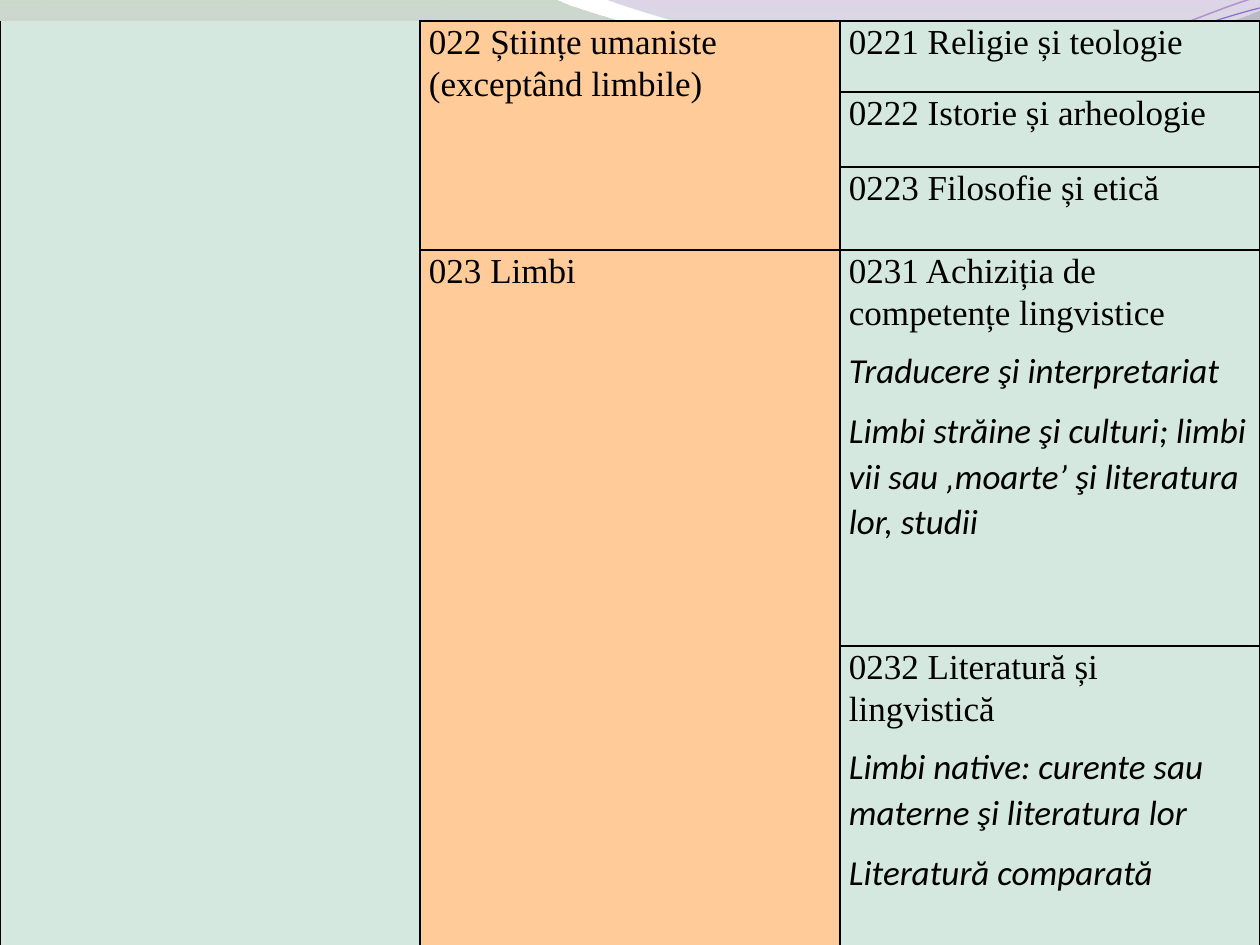
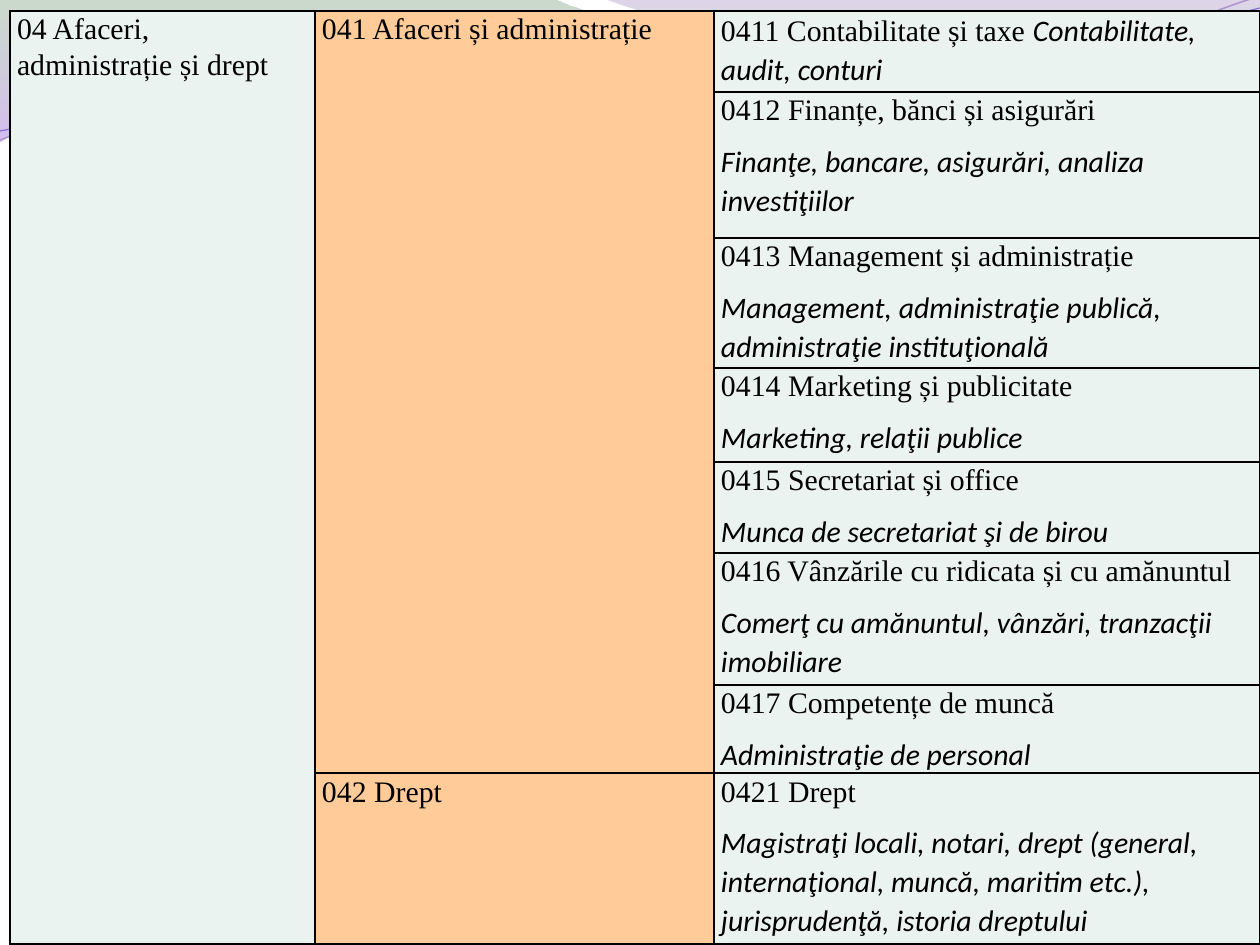
from dataclasses import dataclass

from lxml import etree
from pptx import Presentation
from pptx.dml.color import RGBColor as Rgb
from pptx.oxml.ns import qn
from pptx.util import Pt

EMU_PER_PX = 914400 / 126
SLIDE_BOX = (0, 0, 1260, 945)


@dataclass(frozen=True)
class Theme:
    heading_font: str = "Times New Roman"
    detail_font: str = "Calibri"
    ink: str = "000000"
    narrow_fill: str = "FFCC99"
    mint: str = "D5E8DF"
    pale_mint: str = "EAF3EF"
    large: int = 20
    medium: int = 17
    border: int = 1
    line_spacing: float = 1.07
    space_after: int = 8


THEME = Theme()


@dataclass(frozen=True)
class Field:
    heading: str
    details: tuple = ()
    inline: str = ""


@dataclass(frozen=True)
class Classification:
    box: tuple
    columns: tuple
    rows: tuple
    size: int
    inset: int
    tint: str
    broad: tuple   # (text, number of rows, bordered sides)
    narrow: tuple  # (text, detailed fields)


HUMANITIES = Classification(
    box=(0, 21, 1260, 924),
    columns=(420, 420, 420),
    rows=(71, 75, 83, 396, 315),
    size=THEME.large, inset=9, tint=THEME.mint,
    broad=(("", 3, "LR"), ("", 2, "LRB")),
    narrow=(
        ("022 Științe umaniste (exceptând limbile)", (
            Field("0221 Religie și teologie"),
            Field("0222 Istorie și arheologie"),
            Field("0223 Filosofie și etică"))),
        ("023 Limbi", (
            Field("0231 Achiziția de competențe lingvistice", (
                "Traducere şi interpretariat",
                "Limbi străine şi culturi; limbi vii sau ‚moarte’ şi literatura lor, studii")),
            Field("0232 Literatură și lingvistică", (
                "Limbi native: curente sau materne şi literatura lor",
                "Literatură comparată")))),
    ))

BUSINESS = Classification(
    box=(10, 11, 1250, 933),
    columns=(305, 399, 546),
    rows=(81, 146, 130, 94, 91, 132, 88, 171),
    size=THEME.medium, inset=7, tint=THEME.pale_mint,
    broad=(("04 Afaceri, administrație și drept", 7, "LRT"), ("", 1, "LRB")),
    narrow=(
        ("041 Afaceri și administrație", (
            Field("0411 Contabilitate și taxe ", inline="Contabilitate, audit, conturi"),
            Field("0412 Finanțe, bănci și asigurări",
                  ("Finanţe, bancare, asigurări, analiza investiţiilor",)),
            Field("0413 Management și administrație",
                  ("Management, administraţie publică, administraţie instituţională",)),
            Field("0414 Marketing și publicitate", ("Marketing, relaţii publice",)),
            Field("0415 Secretariat și office", ("Munca de secretariat şi de birou",)),
            Field("0416 Vânzările cu ridicata și cu amănuntul",
                  ("Comerţ cu amănuntul, vânzări, tranzacţii imobiliare",)),
            Field("0417 Competențe de muncă", ("Administraţie de personal",)))),
        ("042 Drept", (
            Field("0421 Drept", (
                "Magistraţi locali, notari, drept (general, internaţional, muncă, "
                "maritim etc.), jurisprudenţă, istoria dreptului",)),)),
    ))

# Outlines: one pair is a straight step, three pairs are one Bézier step.
# Gradient stops: position, colour, opacity in percent.
BANDS = (
    (((0, 0),), ((554, -1),),
     ((600, 21), (837, 79), (955, 79)), ((1075, 79), (1207, 33), (1260, 11)),
     ((1261, 45),),
     ((1239, 55), (1096, 96), (940, 95)), ((784, 95), (481, 35), (324, 43)),
     ((163, 45), (58, 105), (-1, 142))),
    (((604, -1),),
     ((641, 14), (859, 78), (969, 82)), ((1079, 87), (1211, 40), (1260, 26)),
     ((1260, 0),)),
)
BAND_STOPS = (
    ((0, "8DAE8E", 45), (1, "B286E3", 55)),
    ((0, "9173B3", 30), (0.8, "A4D3A7", 45)),
)
STRANDS = (
    ("AE92CD", 0.85,
     (((0, 140),), ((60, 117), (199, 72), (349, 66)),
      ((498, 59), (747, 112), (898, 101)), ((1050, 89), (1182, 19), (1257, -3)))),
    ("8C73D0", 0.75,
     (((0, 131),), ((59, 121), (207, 77), (357, 71)),
      ((508, 64), (752, 106), (903, 95)), ((1053, 84), (1186, 26), (1260, 8)))),
)


def px(length):
    return round(length * EMU_PER_PX)


def draw_outline(slide, box, steps, close):
    """Draw through all points, then turn each run of three into a curve."""
    points = [(px(box[0] + x), px(box[1] + y)) for step in steps for x, y in step]
    builder = slide.shapes.build_freeform(*points[0])
    builder.add_line_segments(points[1:], close=close)
    outline = builder.convert_to_shape()
    outline.shadow.inherit = False
    segments = iter(list(outline.element.iter(qn("a:lnTo"))))
    for step in steps[1:]:
        first, *others = [next(segments) for _ in step]
        if others:
            first.tag = qn("a:cubicBezTo")
            for segment in others:
                first.append(segment[0])
                segment.getparent().remove(segment)
    return outline


def draw_waves(slide, box):
    waves = []
    for steps, stops in zip(BANDS, BAND_STOPS):
        band = draw_outline(slide, box, steps, close=True)
        band.line.fill.background()
        band.fill.gradient()
        band.fill.gradient_angle = 270
        for stop, (position, color, _) in zip(band.fill.gradient_stops, stops):
            stop.position = position
            stop.color.rgb = Rgb.from_string(color)
        tints = band.element.spPr.iter(qn("a:srgbClr"))
        for tint, (_, _, opacity) in zip(tints, stops):
            etree.SubElement(tint, qn("a:alpha"), val=str(opacity * 1000))
        waves.append(band)
    for color, width, steps in STRANDS:
        strand = draw_outline(slide, box, steps, close=False)
        strand.fill.background()
        strand.line.color.rgb = Rgb.from_string(color)
        strand.line.width = Pt(width)
        waves.append(strand)
    return waves


def set_borders(cell, sides):
    """Rule the given sides (letters of LRTB) and clear the others."""
    properties = cell._tc.get_or_add_tcPr()
    for index, side in enumerate("LRTB"):
        rule = etree.Element(qn(f"a:ln{side}"), w=str(Pt(THEME.border)))
        if side in sides:
            fill = etree.SubElement(rule, qn("a:solidFill"))
            etree.SubElement(fill, qn("a:srgbClr"), val=THEME.ink)
        else:
            etree.SubElement(rule, qn("a:noFill"))
        properties.insert(index, rule)


def style_font(font, size, detail=False):
    font.name = THEME.detail_font if detail else THEME.heading_font
    font.italic = detail
    font.size = Pt(size)
    font.color.rgb = Rgb.from_string(THEME.ink)


def write_field(cell, field, size):
    frame = cell.text_frame
    for index, text in enumerate((field.heading, *field.details)):
        paragraph = frame.add_paragraph() if index else frame.paragraphs[0]
        paragraph.line_spacing = THEME.line_spacing
        paragraph.space_after = Pt(THEME.space_after)
        style_font(paragraph.font, size, detail=index > 0)
        if text:
            paragraph.add_run().text = text
    if field.inline:
        examples = frame.paragraphs[0].add_run()
        examples.text = field.inline
        style_font(examples.font, size, detail=True)


def fill_block(grid, plan, column, first, count, field, color, sides="LRTB"):
    """Merge rows of one column into a block and fill it."""
    for row in range(first, first + count):
        cell = grid.cell(row, column)
        ends = ("T" if row == first else "") + ("B" if row == first + count - 1 else "")
        set_borders(cell, [side for side in sides if side in "LR" + ends])
        cell.fill.solid()
        cell.fill.fore_color.rgb = Rgb.from_string(color)
        cell.margin_left = cell.margin_right = px(plan.inset)
        cell.margin_top = cell.margin_bottom = 0
    head = grid.cell(first, column)
    if count > 1:
        head.merge(grid.cell(first + count - 1, column))
    if field.heading:
        write_field(head, field, plan.size)


def draw_classification(slide, plan):
    grid = slide.shapes.add_table(len(plan.rows), len(plan.columns),
                                  *map(px, plan.box)).table
    grid.first_row = grid.horz_banding = False
    for column, width in zip(grid.columns, plan.columns):
        column.width = px(width)
    for row, height in zip(grid.rows, plan.rows):
        row.height = px(height)

    top = 0
    for text, count, sides in plan.broad:
        fill_block(grid, plan, 0, top, count, Field(text), plan.tint, sides)
        top += count
    top = 0
    for text, fields in plan.narrow:
        fill_block(grid, plan, 1, top, len(fields), Field(text), THEME.narrow_fill)
        for row, field in enumerate(fields, top):
            fill_block(grid, plan, 2, row, 1, field, plan.tint)
        top += len(fields)


def main():
    deck = Presentation()
    deck.slide_width, deck.slide_height = map(px, SLIDE_BOX[2:])
    blank = deck.slide_layouts[6]
    slides = [deck.slides.add_slide(blank) for _ in range(2)]
    # The waves are shared, so they move to the layout behind both slides.
    for wave in draw_waves(slides[0], SLIDE_BOX):
        blank.shapes.element.append(wave.element)
    for slide, plan in zip(slides, (HUMANITIES, BUSINESS)):
        draw_classification(slide, plan)
    deck.save("out.pptx")


if __name__ == "__main__":
    main()
